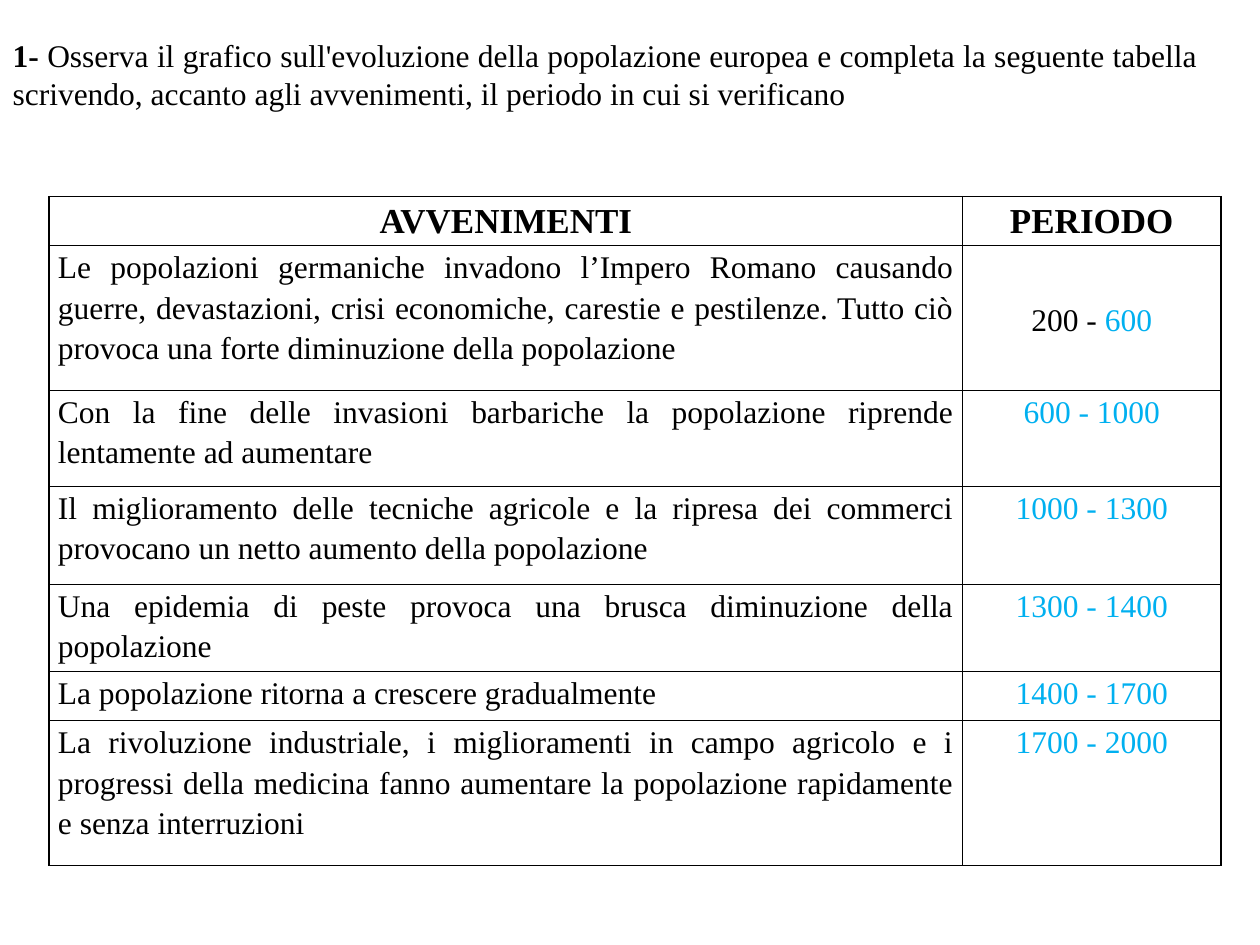
import pptx
import pptx.util
import pptx.dml.color
import pptx.enum.text
from lxml import etree
from pptx.oxml.ns import qn

Inches, Pt = pptx.util.Inches, pptx.util.Pt
ALIGN = pptx.enum.text.PP_ALIGN
ANCHOR = pptx.enum.text.MSO_ANCHOR

# Content
BLACK, WHITE, ANSWER = "000000", "FFFFFF", "00B0F0"
FONT = "Times New Roman"
TASK_NUMBER = "1- "
TASK = ("Osserva il grafico sull'evoluzione della popolazione europea e completa "
        "la seguente tabella scrivendo, accanto agli avvenimenti, il periodo in "
        "cui si verificano")
HEADINGS = ("AVVENIMENTI", "PERIODO")
# Event, given part of the period, answer, row height
EVENTS = [
    ("Le popolazioni germaniche invadono l’Impero Romano causando guerre, "
     "devastazioni, crisi economiche, carestie e pestilenze. Tutto ciò provoca "
     "una forte diminuzione della popolazione", "200 -", " 600", 1.15),
    ("Con la fine delle invasioni barbariche la popolazione riprende lentamente "
     "ad aumentare", "", "600 - 1000", 0.76),
    ("Il miglioramento delle tecniche agricole e la ripresa dei commerci "
     "provocano un netto aumento della popolazione", "", "1000 - 1300", 0.78),
    ("Una epidemia di peste provoca una brusca diminuzione della popolazione",
     "", "1300 - 1400", 0.64),
    ("La popolazione ritorna a crescere gradualmente", "", "1400 - 1700", 0.39),
    ("La rivoluzione industriale, i miglioramenti in campo agricolo e i progressi "
     "della medicina fanno aumentare la popolazione rapidamente e senza "
     "interruzioni", "", "1700 - 2000", 1.15),
]
HEADING_HEIGHT = 0.39
COLUMN_WIDTHS = (7.25, 2.05)


def rgb(color):
    return pptx.dml.color.RGBColor.from_string(color)


def add_text(paragraph, text, size=18, color=BLACK, bold=False):
    run = paragraph.add_run()
    run.text = text
    run.font.name = FONT
    run.font.size = Pt(size)
    run.font.bold = bold
    run.font.color.rgb = rgb(color)


def add_borders(cell, color=BLACK, width=1):
    properties = cell._tc.get_or_add_tcPr()
    for index, side in enumerate(("lnL", "lnR", "lnT", "lnB")):
        line = etree.Element(qn(f"a:{side}"), w=str(Pt(width)))
        fill = etree.SubElement(line, qn("a:solidFill"))
        etree.SubElement(fill, qn("a:srgbClr"), val=color)
        properties.insert(index, line)


def format_cell(cell, align):
    cell.fill.solid()
    cell.fill.fore_color.rgb = rgb(WHITE)
    add_borders(cell)
    cell.margin_left = cell.margin_right = Inches(0.07)
    cell.margin_top = cell.margin_bottom = 0
    paragraph = cell.text_frame.paragraphs[0]
    paragraph.alignment = align
    paragraph.line_spacing = 1.15
    paragraph.space_after = Pt(10)
    return paragraph


def main():
    presentation = pptx.Presentation()
    presentation.slide_width, presentation.slide_height = Inches(10), Inches(7.5)
    slide = presentation.slides.add_slide(presentation.slide_layouts[5])

    # Task
    task = slide.shapes.title
    task.left, task.top = Inches(0), Inches(0.23)
    task.width, task.height = Inches(9.61), Inches(0.71)
    task.text_frame.word_wrap = True
    task.text_frame.auto_size = pptx.enum.text.MSO_AUTO_SIZE.SHAPE_TO_FIT_TEXT
    task.text_frame.vertical_anchor = ANCHOR.MIDDLE
    sentence = task.text_frame.paragraphs[0]
    sentence.alignment = ALIGN.JUSTIFY
    add_text(sentence, TASK_NUMBER, bold=True)
    add_text(sentence, TASK)

    # Table grid
    heights = [HEADING_HEIGHT] + [event[-1] for event in EVENTS]
    table = slide.shapes.add_table(
        len(heights), len(COLUMN_WIDTHS), Inches(0.39), Inches(1.56),
        Inches(sum(COLUMN_WIDTHS)), Inches(sum(heights))).table
    for column, width in zip(table.columns, COLUMN_WIDTHS):
        column.width = Inches(width)
    for row, height in zip(table.rows, heights):
        row.height = Inches(height)

    # Headings
    for column, heading in enumerate(HEADINGS):
        add_text(format_cell(table.cell(0, column), ALIGN.CENTER), heading,
                 size=20, bold=True)

    # Events and periods
    for row, (event, given, answer, _) in enumerate(EVENTS, start=1):
        add_text(format_cell(table.cell(row, 0), ALIGN.JUSTIFY), event)
        period_cell = table.cell(row, 1)
        period = format_cell(period_cell, ALIGN.CENTER)
        if given:
            period_cell.vertical_anchor = ANCHOR.MIDDLE
            add_text(period, given)
        add_text(period, answer, color=ANSWER)

    presentation.save("out.pptx")


if __name__ == "__main__":
    main()
